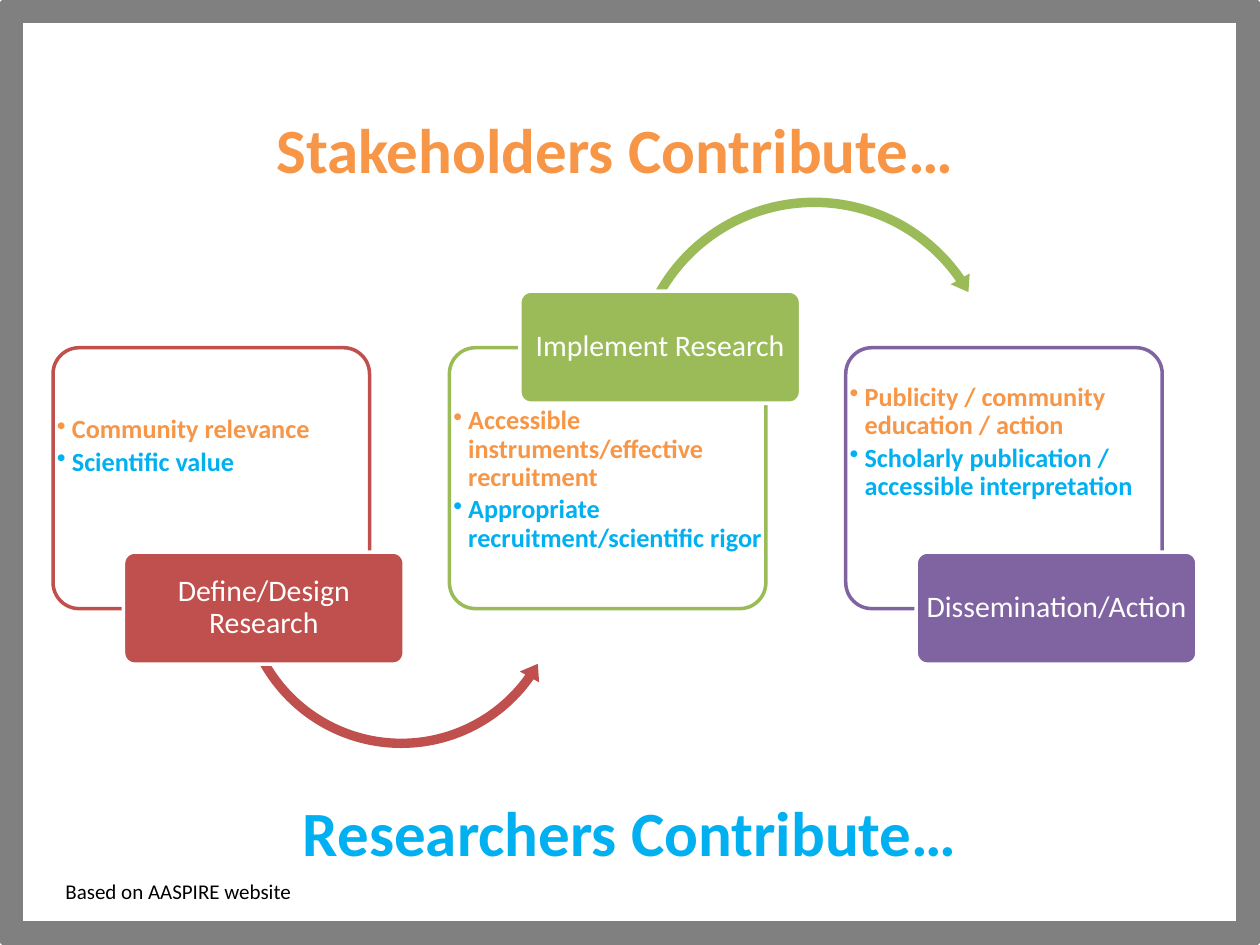
from dataclasses import dataclass
from typing import Optional

from lxml.etree import SubElement
from pptx import Presentation
from pptx.dml.color import RGBColor
from pptx.enum.shapes import MSO_SHAPE
from pptx.enum.text import MSO_ANCHOR, PP_ALIGN
from pptx.oxml.ns import qn
from pptx.util import Cm, Pt

WHITE = RGBColor(0xFF, 0xFF, 0xFF)
BLACK = RGBColor(0x00, 0x00, 0x00)
GRAY = RGBColor(0x80, 0x80, 0x80)
RED = RGBColor(0xC0, 0x50, 0x4D)
GREEN = RGBColor(0x9B, 0xBB, 0x59)
PURPLE = RGBColor(0x80, 0x64, 0xA2)
ORANGE = RGBColor(0xF7, 0x96, 0x46)  # stakeholders
BLUE = RGBColor(0x00, 0xB0, 0xF0)  # researchers

# Measures in centimetres
PANEL_LEFT, PANEL_TOP, PANEL_PITCH = 1.07, 7.01, 7.99
PANEL_WIDTH, PANEL_HEIGHT = 6.38, 5.26
LABEL_SHIFT, LABEL_WIDTH, LABEL_HEIGHT = 1.42, 5.66, 2.26
BULLET_INDENT = 0.3


@dataclass
class Arc:
    kind: MSO_SHAPE
    left: float
    top: float
    size: float
    adjustments: tuple


@dataclass
class Stage:
    name: str
    color: RGBColor
    label_top: float
    points_top: float
    stakeholders: str
    researchers: str
    arc: Optional[Arc] = None


STAGES = [
    Stage("Define/Design Research", RED, 11.13, 8.31,
          "Community relevance", "Scientific value",
          Arc(MSO_SHAPE.LEFT_CIRCULAR_ARROW, 4.7, 8.43, 6.78,
              (0.028, 3.4, 21.155, 90.245, 0.033))),
    Stage("Implement Research", GREEN, 5.87, 8.13,
          "Accessible instruments/effective recruitment",
          "Appropriate recruitment/scientific rigor",
          Arc(MSO_SHAPE.CIRCULAR_ARROW, 12.62, 3.86, 7.59,
              (0.025, 3.014, 195.23, 125.755, 0.029))),
    Stage("Dissemination/Action", PURPLE, 11.13, 7.66,
          "Publicity / community education / action",
          "Scholarly publication / accessible interpretation"),
]


def add_block(slide, kind, left: float, top: float, width: float, height: float,
              fill: RGBColor, line: Optional[RGBColor] = None,
              line_width: float = 2, adjustments: tuple = ()):
    block = slide.shapes.add_shape(kind, Cm(left), Cm(top), Cm(width), Cm(height))
    block.shadow.inherit = False
    block.fill.solid()
    block.fill.fore_color.rgb = fill
    if line is None:
        block.line.fill.background()
    else:
        block.line.color.rgb = line
        block.line.width = Pt(line_width)
    for index, value in enumerate(adjustments):
        block.adjustments[index] = value
    return block


def add_box(slide, left: float, top: float, width: float, height: float,
            wrap: bool = True, margin: Optional[float] = None):
    frame = slide.shapes.add_textbox(Cm(left), Cm(top), Cm(width), Cm(height)).text_frame
    frame.word_wrap = wrap
    if margin is not None:
        set_margins(frame, margin, margin)
    return frame


def set_margins(frame, horizontal: float, vertical: float) -> None:
    frame.margin_left = frame.margin_right = Cm(horizontal)
    frame.margin_top = frame.margin_bottom = Cm(vertical)


def write(paragraph, text: str, *, size: float, color: RGBColor, bold: bool = False,
          align=PP_ALIGN.LEFT, line_spacing: float = 1.0, after: float = 0,
          bullet: bool = False) -> None:
    paragraph.alignment = align
    paragraph.line_spacing = line_spacing
    paragraph.space_after = Pt(after)
    if bullet:
        properties = paragraph._p.get_or_add_pPr()
        properties.set("marL", str(Cm(BULLET_INDENT)))
        properties.set("indent", str(-Cm(BULLET_INDENT)))
        SubElement(properties, qn("a:buChar")).set("char", "•")
    run = paragraph.add_run()
    run.text = text
    run.font.name = "Calibri"
    run.font.size = Pt(size)
    run.font.bold = bold
    run.font.color.rgb = color


def add_stage(slide, stage: Stage, left: float) -> None:
    # Outlined panel
    panel = add_block(slide, MSO_SHAPE.ROUNDED_RECTANGLE, left, PANEL_TOP,
                      PANEL_WIDTH, PANEL_HEIGHT, WHITE, stage.color, adjustments=(0.1,))
    fill_color = panel._element.spPr.find(qn("a:solidFill"))[0]
    SubElement(fill_color, qn("a:alpha")).set("val", "90000")

    # Contributions of both groups
    points = add_box(slide, left, stage.points_top, PANEL_WIDTH, 4.14, margin=0.08)
    style = dict(size=15, bold=True, line_spacing=0.9, after=2.25, bullet=True)
    write(points.paragraphs[0], stage.stakeholders, color=ORANGE, **style)
    write(points.add_paragraph(), stage.researchers, color=BLUE, **style)

    # Arrow to the next stage
    if stage.arc:
        arc = stage.arc
        add_block(slide, arc.kind, arc.left, arc.top, arc.size, arc.size,
                  stage.color, adjustments=arc.adjustments)

    # Stage name
    label = add_block(slide, MSO_SHAPE.ROUNDED_RECTANGLE, left + LABEL_SHIFT,
                      stage.label_top, LABEL_WIDTH, LABEL_HEIGHT,
                      stage.color, WHITE, adjustments=(0.1,)).text_frame
    label.word_wrap = True
    label.vertical_anchor = MSO_ANCHOR.MIDDLE
    set_margins(label, 0.1, 0.05)
    write(label.paragraphs[0], stage.name, size=17, color=WHITE,
          align=PP_ALIGN.CENTER, line_spacing=0.9)


def main() -> None:
    deck = Presentation()
    deck.slide_width, deck.slide_height = Cm(25.4), Cm(19.05)
    slide = deck.slides.add_slide(deck.slide_layouts[6])

    # Gray border
    add_block(slide, MSO_SHAPE.RECTANGLE, 0.21, 0.21, 24.98, 18.63, WHITE, GRAY, 15)

    # Three stages
    for index, stage in enumerate(STAGES):
        add_stage(slide, stage, PANEL_LEFT + index * PANEL_PITCH)

    # Headings and source
    for text, color, left, top in (("Stakeholders Contribute…", ORANGE, 3.61, 2.11),
                                   ("Researchers Contribute…", BLUE, 3.91, 15.88)):
        heading = add_box(slide, left, top, 17.58, 1.8)
        write(heading.paragraphs[0], text, size=36, color=color, bold=True,
              align=PP_ALIGN.CENTER)
    source = add_box(slide, 1.07, 17.58, 5.13, 0.76, wrap=False)
    write(source.paragraphs[0], "Based on AASPIRE website", size=12, color=BLACK)

    deck.save("out.pptx")


if __name__ == "__main__":
    main()
